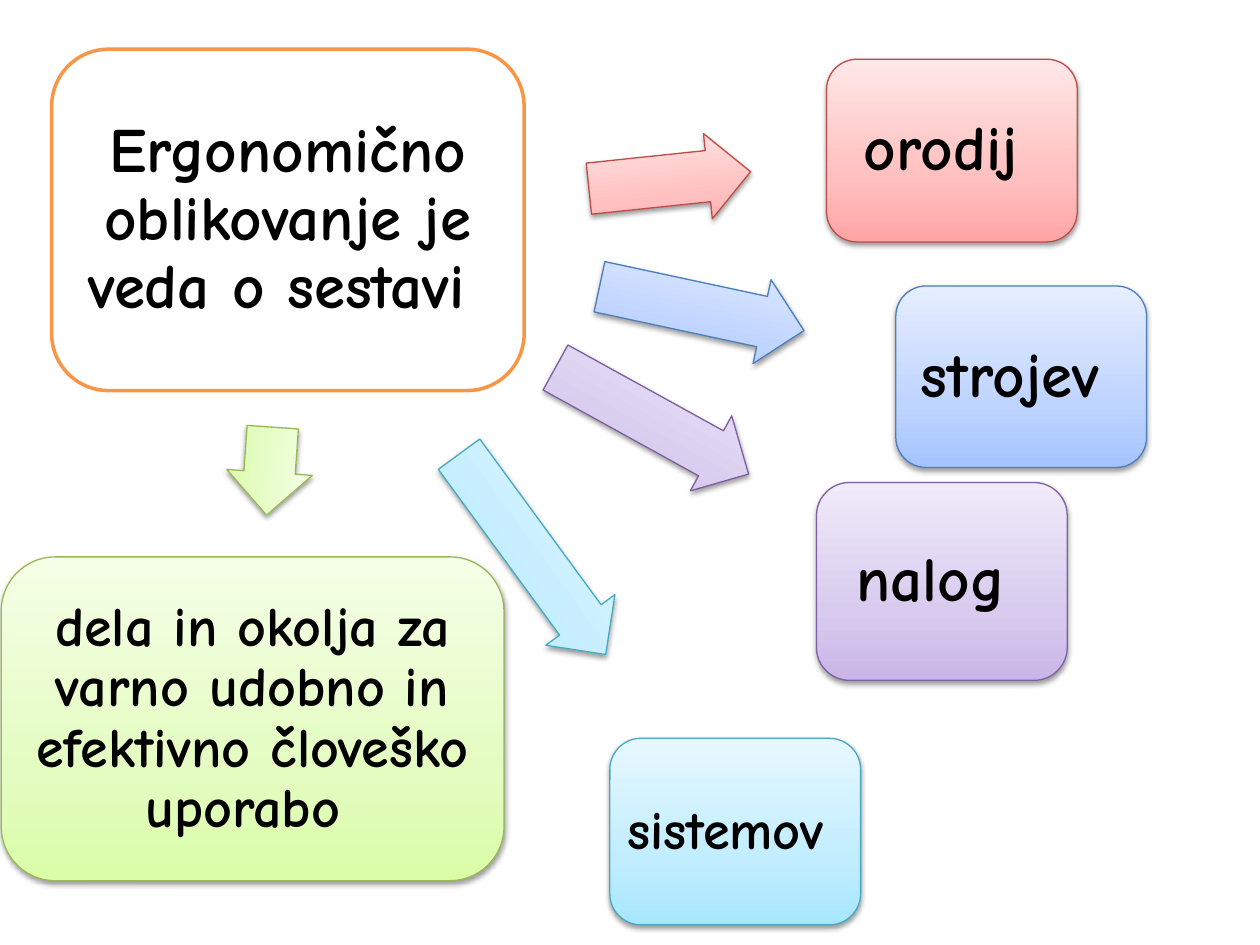
"""Build a slide that links ergonomic design to the five things it shapes."""
from copy import deepcopy
from dataclasses import dataclass

from lxml.etree import SubElement
from pptx import Presentation
from pptx.dml.color import RGBColor
from pptx.enum.shapes import MSO_SHAPE as Shp
from pptx.enum.text import MSO_ANCHOR as Anchor, MSO_AUTO_SIZE as Fit, PP_ALIGN as Align
from pptx.oxml.ns import qn
from pptx.util import Inches, Pt

CELL = Inches(0.1)
COLS, ROWS = 100, 75
CORNER = 1 / 6
CORNER_INSET = CORNER * (1 - 0.5 ** 0.5)
ARROW_ROWS = 6.8


@dataclass(frozen=True)
class Tone:
    dark: str
    mid: str
    light: str
    line: str


@dataclass(frozen=True)
class Theme:
    font: str = "Comic Neue"
    ink: str = "000000"
    paper: str = "FFFFFF"
    accent: str = "F79646"
    large: float = 36
    medium: float = 32
    small: float = 31
    frame: float = 2
    outline: float = 0.75
    red: Tone = Tone("FFA6A5", "FFC0BF", "FFE7E7", "BF4C48")
    blue: Tone = Tone("A4C4FF", "BFD4FF", "E6EEFF", "4B7EBC")
    aqua: Tone = Tone("A7E6FF", "C1EDFF", "E7F8FF", "46AAC5")
    purple: Tone = Tone("C9B5E8", "D8CBEE", "F0EAF9", "7D60A0")
    green: Tone = Tone("DAFDA7", "E4FCC2", "F5FFE7", "98B955")


@dataclass(frozen=True)
class Area:
    col: float
    row: float
    cols: float
    rows: float

    def emu(self) -> list[int]:
        return [round(v * CELL) for v in (self.col, self.row, self.cols, self.rows)]

    def inner(self) -> "Area":
        d = min(self.cols, self.rows) * CORNER_INSET
        return Area(self.col + d, self.row + d, self.cols - 2 * d, self.rows - 2 * d)


@dataclass(frozen=True)
class Topic:
    text: str
    size: float
    tone: Tone
    box: Area
    arrow: Area
    angle: float


T = Theme()
HUB = Area(4.1, 3.9, 37.5, 27.1)
HUB_TEXT = "Ergonomično oblikovanje je veda o sestavi "
TOPICS = [
    Topic("orodij ", T.large, T.red, Area(65.6, 4.7, 19.9, 14.5),
          Area(46.7, 10.9, 12.9, ARROW_ROWS), 354),
    Topic("strojev ", T.large, T.blue, Area(71.1, 22.7, 19.9, 14.4),
          Area(47.4, 21.1, 16.6, ARROW_ROWS), 12.1),
    Topic("sistemov ", T.small, T.aqua, Area(48.4, 58.6, 19.9, 14.8),
          Area(32.4, 40.6, 19.7, ARROW_ROWS), 53.8),
    Topic("nalog ", T.large, T.purple, Area(64.8, 38.3, 19.9, 15.7),
          Area(43, 30, 17.5, ARROW_ROWS), 28.9),
    Topic("dela in okolja za varno udobno in efektivno človeško uporabo ",
          T.medium, T.green, Area(0.1, 44.2, 39.9, 25.7),
          Area(17.9, 34, 7, ARROW_ROWS), 94),
]


def rgb(value: str) -> RGBColor:
    return RGBColor.from_string(value)


def write(sp, text: str, *, size: float, margin: float = 0.05) -> None:
    tf = sp.text_frame
    tf.word_wrap, tf.auto_size = True, Fit.NONE
    tf.vertical_anchor = Anchor.MIDDLE
    tf.margin_left = tf.margin_right = Inches(margin)
    tf.margin_top = tf.margin_bottom = Inches(margin)
    p = tf.paragraphs[0]
    p.alignment, p.line_spacing = Align.CENTER, 0.9
    r = p.add_run()
    r.text = text
    r.font.name, r.font.size, r.font.bold = T.font, Pt(size), True
    r.font.color.rgb = rgb(T.ink)


def draw(s, kind: Shp, area: Area, line: str, width: float):
    sp = s.shapes.add_shape(kind, *area.emu())
    sp.line.color.rgb, sp.line.width = rgb(line), Pt(width)
    sp.shadow.inherit = False
    return sp


def shade(sp, tone: Tone) -> None:
    sp.fill.gradient()
    sp.fill.gradient_angle = 90
    spPr = sp._element.spPr
    stops = spPr.find(qn("a:gradFill")).find(qn("a:gsLst"))
    stops.insert(1, deepcopy(stops[0]))
    levels = ((0, tone.dark), (0.35, tone.mid), (1, tone.light))
    for stop, (position, color) in zip(sp.fill.gradient_stops, levels):
        stop.position, stop.color.rgb = position, rgb(color)
    shadow = SubElement(spPr.find(qn("a:effectLst")), qn("a:outerShdw"),
                        blurRad=str(Pt(3.1)), dist=str(Pt(1.6)),
                        dir="5400000", rotWithShape="0")
    color = SubElement(shadow, qn("a:srgbClr"), val=T.ink)
    SubElement(color, qn("a:alpha"), val="38000")


def add_hub(s) -> None:
    sp = draw(s, Shp.ROUNDED_RECTANGLE, HUB, T.accent, T.frame)
    sp.fill.solid()
    sp.fill.fore_color.rgb = rgb(T.paper)
    title = s.shapes.title
    title.left, title.top, title.width, title.height = HUB.inner().emu()
    write(title, HUB_TEXT, size=T.large)
    sp._element.addnext(title._element)


def add_topic(s, topic: Topic) -> None:
    arrow = draw(s, Shp.RIGHT_ARROW, topic.arrow, topic.tone.line, T.outline)
    arrow.adjustments[0], arrow.adjustments[1] = 0.6, 0.5
    arrow.rotation = topic.angle
    shade(arrow, topic.tone)
    box = draw(s, Shp.ROUNDED_RECTANGLE, topic.box, topic.tone.line, T.outline)
    shade(box, topic.tone)
    label = s.shapes.add_textbox(*topic.box.inner().emu())
    write(label, topic.text, size=topic.size,
          margin=0.05 if topic.size == T.large else 0.04)


def main() -> None:
    prs = Presentation()
    prs.slide_width, prs.slide_height = COLS * CELL, ROWS * CELL
    s = prs.slides.add_slide(prs.slide_layouts[5])
    add_hub(s)
    for topic in TOPICS:
        add_topic(s, topic)
    prs.save("out.pptx")


if __name__ == "__main__":
    main()
